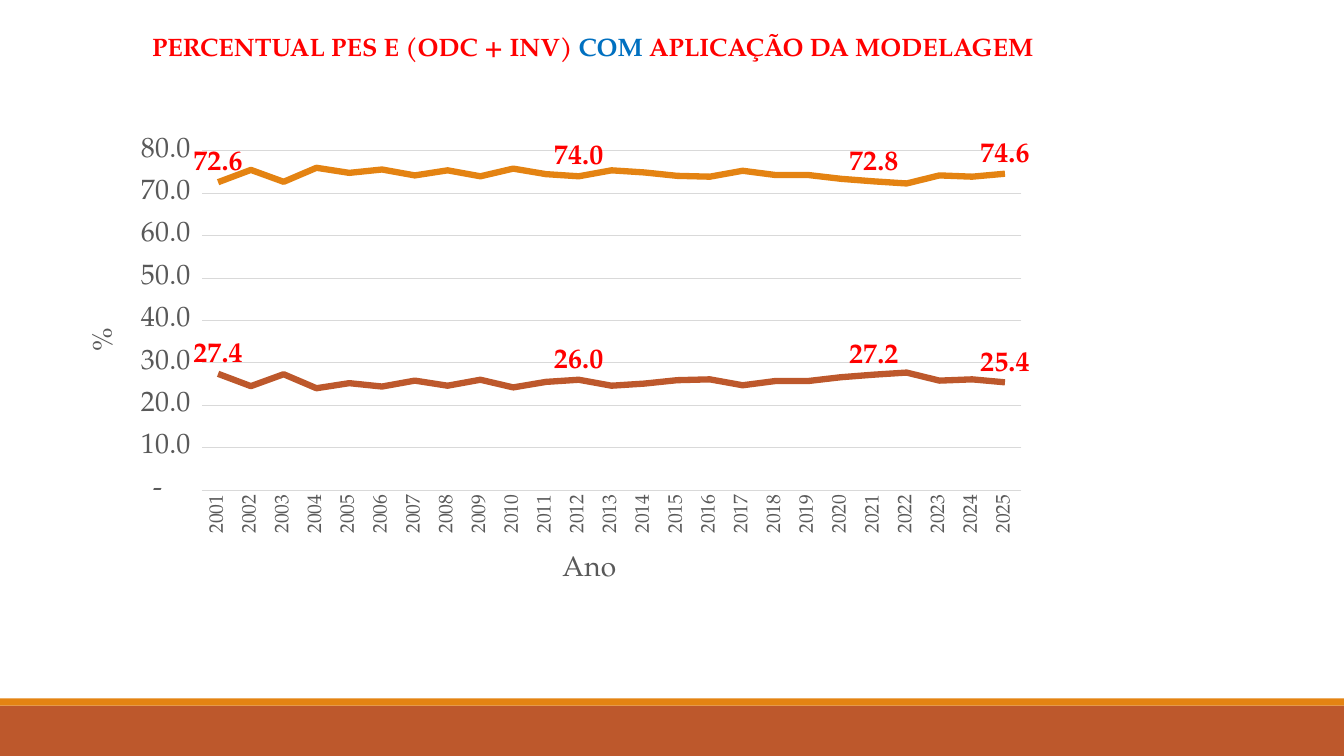
from lxml import etree
from pptx import Presentation
from pptx.chart.data import CategoryChartData
from pptx.dml.color import RGBColor
from pptx.enum.chart import XL_CHART_TYPE, XL_LABEL_POSITION, XL_TICK_MARK
from pptx.enum.shapes import MSO_SHAPE
from pptx.enum.text import MSO_ANCHOR, MSO_AUTO_SIZE, PP_ALIGN
from pptx.oxml.ns import qn
from pptx.util import Cm, Pt

LINE = XL_CHART_TYPE.LINE
ABOVE = XL_LABEL_POSITION.ABOVE
NO_TICK = XL_TICK_MARK.NONE
RECT = MSO_SHAPE.RECTANGLE
TOP = MSO_ANCHOR.TOP
FIXED = MSO_AUTO_SIZE.NONE
LEFT = PP_ALIGN.LEFT

TITLE = [
    ("PERCENTUAL PES E (ODC + INV) ", "red"),
    ("COM ", "blue"),
    ("APLICAÇÃO DA MODELAGEM", "red"),
]
YEARS = [str(year) for year in range(2001, 2026)]
UPPER = [
    72.6, 75.5, 72.7, 76.0, 74.8, 75.6, 74.2, 75.4, 74.0, 75.8, 74.5, 74.0, 75.4,
    74.9, 74.1, 73.9, 75.3, 74.3, 74.3, 73.4, 72.8, 72.3, 74.2, 73.9, 74.6,
]
SERIES = [
    ("Series 1", UPPER, "orange"),
    ("Series 2", [round(100 - value, 1) for value in UPPER], "rust"),
]
MARKED = ["2001", "2012", "2021", "2025"]
BANDS = [(17.78, 1.27, "rust"), (17.6, 0.18, "orange")]

THEME = {
    "font": "TeX Gyre Pagella",
    "red": RGBColor(0xFF, 0x00, 0x00),
    "blue": RGBColor(0x00, 0x70, 0xC0),
    "orange": RGBColor(0xE4, 0x83, 0x12),
    "rust": RGBColor(0xBD, 0x58, 0x2C),
    "gray": RGBColor(0x59, 0x59, 0x59),
    "pale": RGBColor(0xD9, 0xD9, 0xD9),
    "title": Pt(18),
    "label": Pt(20),
    "year": Pt(14),
    "thick": Pt(4.5),
    "thin": Pt(0.75),
}
WIDE, HIGH = 33.87, 19.05
TITLE_BOX = {"left": Cm(3.58), "top": Cm(0.66), "width": Cm(23.5), "height": Cm(1.8)}
CHART_BOX = [Cm(n) for n in (1.35, 3.2, 24.89, 12.04)]
PLOT_AREA = {"layoutTarget": "inner", "xMode": "edge", "yMode": "edge",
             "x": 0.15, "y": 0.05, "w": 0.83, "h": 0.71}
YEAR_NAME = {"xMode": "edge", "yMode": "edge", "x": 0.51, "y": 0.88}
SHARE_NAME = {"xMode": "edge", "yMode": "edge", "x": 0.03, "y": 0.41}
VALUE_FORMAT = '_-* #,##0.0_-;\\-* #,##0.0_-;_-* "-"??_-'
UPRIGHT = "-5400000"


def apply(target, values):
    """Set each named attribute on the target."""
    for name, value in values.items():
        setattr(target, name, value)


def style(font, size, color, bold=False):
    """Give a font the theme face, size and colour."""
    apply(font, {"name": THEME["font"], "size": THEME[size], "bold": bold})
    font.color.rgb = THEME[color]


def draw(line, width, color):
    """Give a line its width and colour."""
    line.width = THEME[width]
    line.color.rgb = THEME[color]


def place(parent, index, values):
    """Fix the layout of a chart part."""
    for old in parent.findall(qn("c:layout")):
        parent.remove(old)
    layout = etree.Element(qn("c:layout"))
    manual = etree.SubElement(layout, qn("c:manualLayout"))
    for name, value in values.items():
        etree.SubElement(manual, qn("c:" + name)).set("val", str(value))
    parent.insert(index, layout)


def turn(element):
    """Turn text to read upward."""
    body = element.find(".//" + qn("a:bodyPr"))
    body.set("rot", UPRIGHT)
    body.set("vert", "horz")


def name_axis(axis, text, spot):
    """Title an axis at a fixed spot."""
    title = axis.axis_title
    title.text_frame.text = text
    style(title.text_frame.paragraphs[0].runs[0].font, "label", "gray")
    place(title.element, 1, spot)
    return title


def add_title(slide):
    """Fill the title placeholder."""
    title = slide.shapes.title
    apply(title, TITLE_BOX)
    frame = title.text_frame
    apply(frame, {"word_wrap": True, "auto_size": FIXED, "vertical_anchor": TOP})
    line = frame.paragraphs[0]
    line.alignment = LEFT
    for text, color in TITLE:
        run = line.add_run()
        run.text = text
        style(run.font, "title", color, True)


def add_bands(slide):
    """Draw the bottom bands."""
    for top, height, color in BANDS:
        band = slide.shapes.add_shape(RECT, 0, Cm(top), Cm(WIDE), Cm(height))
        band.shadow.inherit = False
        band.fill.solid()
        band.fill.fore_color.rgb = THEME[color]
        band.line.fill.background()


def style_axes(chart):
    """Format both axes."""
    years, shares = chart.category_axis, chart.value_axis
    for axis, size in ((years, "year"), (shares, "label")):
        apply(axis, {"major_tick_mark": NO_TICK, "minor_tick_mark": NO_TICK})
        style(axis.tick_labels.font, size, "gray")
    turn(chart.element.find(f".//{qn('c:catAx')}/{qn('c:txPr')}"))
    draw(years.format.line, "thin", "pale")
    apply(shares, {"minimum_scale": 0, "maximum_scale": 80, "major_unit": 10,
                   "has_major_gridlines": True})
    apply(shares.tick_labels, {"number_format": VALUE_FORMAT,
                               "number_format_is_linked": False})
    draw(shares.major_gridlines.format.line, "thin", "pale")
    shares.format.line.fill.background()
    name_axis(years, "Ano", YEAR_NAME)
    turn(name_axis(shares, "%", SHARE_NAME).element)


def style_series(series, color):
    """Format a line and label its marked years."""
    series.smooth = False
    draw(series.format.line, "thick", color)
    series.data_labels.show_value = False
    for year in MARKED:
        label = series.points[YEARS.index(year)].data_label
        style(label.font, "label", "red", True)
        label.position = ABOVE


def add_chart(slide):
    """Add the line chart of shares by year."""
    data = CategoryChartData(number_format="0.0")
    data.categories = YEARS
    for name, values, color in SERIES:
        data.add_series(name, values)
    chart = slide.shapes.add_chart(LINE, *CHART_BOX, data).chart
    apply(chart, {"has_legend": False, "has_title": False})
    apply(chart.font, {"name": THEME["font"], "size": THEME["label"]})
    chart.plots[0].vary_by_categories = False
    style_axes(chart)
    for series, (name, values, color) in zip(chart.plots[0].series, SERIES):
        style_series(series, color)
    for label in chart.element.findall(".//" + qn("c:dLbl")):
        form = etree.Element(qn("c:numFmt"), formatCode="0.0", sourceLinked="0")
        label.insert(1, form)
    place(chart.element.find(".//" + qn("c:plotArea")), 0, PLOT_AREA)


def main():
    """Build and save the slide."""
    deck = Presentation()
    apply(deck, {"slide_width": Cm(WIDE), "slide_height": Cm(HIGH)})
    slide = deck.slides.add_slide(deck.slide_layouts[5])
    add_bands(slide)
    add_chart(slide)
    add_title(slide)
    deck.save("out.pptx")


if __name__ == "__main__":
    main()
